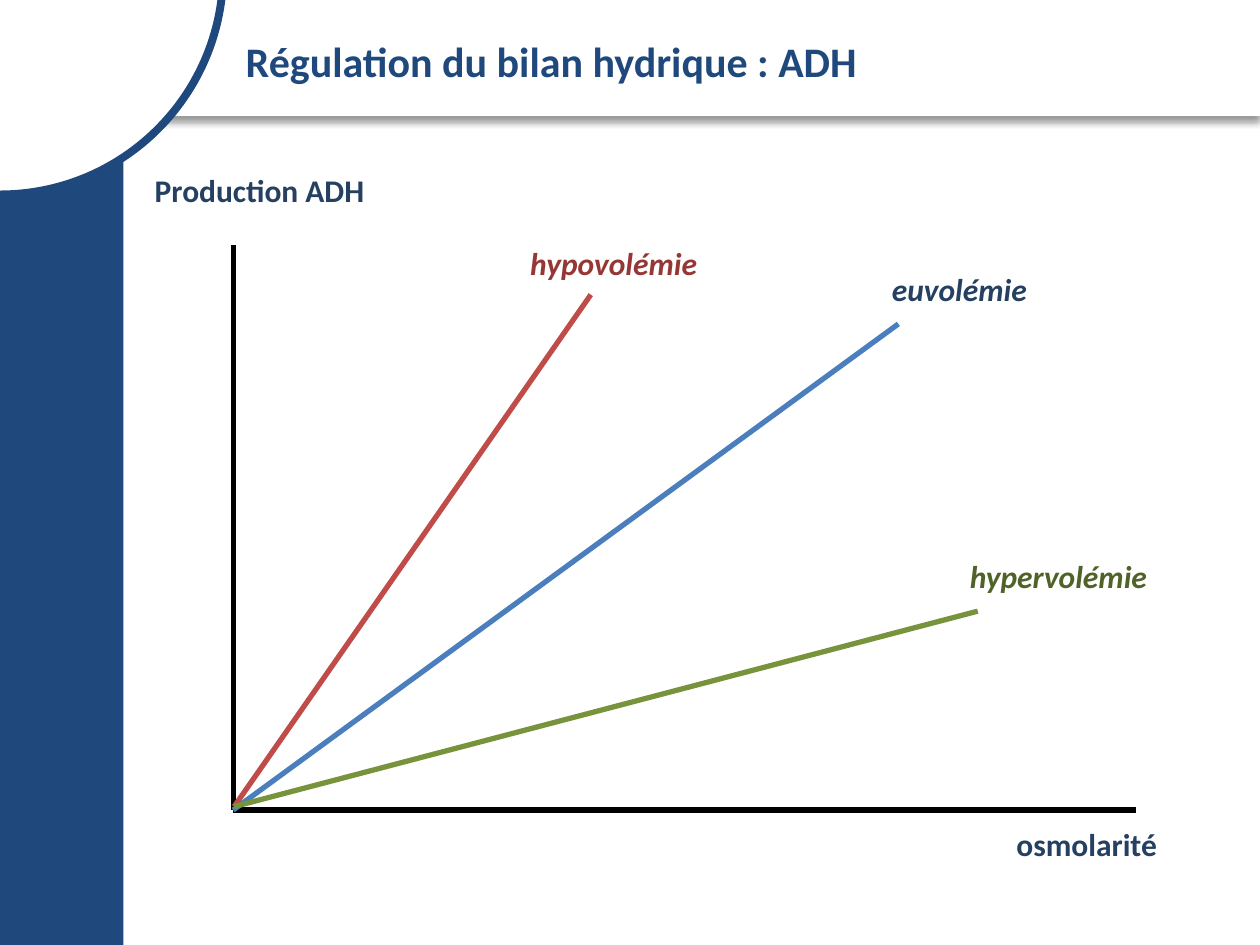
from lxml.etree import SubElement
from pptx import Presentation
from pptx.dml.color import RGBColor
from pptx.enum.shapes import MSO_CONNECTOR, MSO_SHAPE
from pptx.enum.text import MSO_ANCHOR, MSO_AUTO_SIZE, PP_ALIGN
from pptx.oxml.ns import qn
from pptx.util import Cm, Pt

COLORS = {
    "white": "FFFFFF", "black": "000000", "blue": "1F497D", "navy": "254061",
    "blue line": "4B7EBC", "red line": "BF4C48", "green line": "77933C",
    "red text": "953735", "green text": "4F6228",
}


def color(name):
    return RGBColor.from_string(COLORS[name])


def write_text(box, text, size=18, ink="navy", italic=False, anchor=MSO_ANCHOR.TOP):
    frame = box.text_frame
    frame.word_wrap = True
    frame.vertical_anchor = anchor
    para = frame.paragraphs[0]
    para.alignment = PP_ALIGN.LEFT
    span = para.add_run()
    span.text = text
    span.font.name = "Calibri"
    span.font.size = Pt(size)
    span.font.bold = True
    span.font.italic = italic
    span.font.color.rgb = color(ink)


deck = Presentation()
deck.slide_width, deck.slide_height = Cm(25.4), Cm(19.05)
page = deck.slides.add_slide(deck.slide_layouts[5])
shapes = page.shapes

# Header band, side band and corner disc
radius, center_y = 4.5, -0.58
decor = [
    (MSO_SHAPE.RECTANGLE, 0, 0, 25.4, 2.34, "white"),
    (MSO_SHAPE.RECTANGLE, 0, 0, 2.49, 19.05, "blue"),
    (MSO_SHAPE.OVAL, -radius, center_y - radius, 2 * radius, 2 * radius, "white"),
]
bands = []
for kind, left, top, width, height, fill in decor:
    band = shapes.add_shape(kind, Cm(left), Cm(top), Cm(width), Cm(height))
    band.shadow.inherit = False
    band.fill.solid()
    band.fill.fore_color.rgb = color(fill)
    band.line.fill.background()
    bands.append(band)
header, side, disc = bands
disc.line.color.rgb = color("blue")
disc.line.width = Pt(4.5)

effects = header._element.spPr.find(qn("a:effectLst"))
shadow = SubElement(effects, qn("a:outerShdw"), blurRad=str(Pt(4)), dist=str(Pt(3)),
                    dir="5400000", algn="t", rotWithShape="0")
shade = SubElement(shadow, qn("a:srgbClr"), val=COLORS["black"])
SubElement(shade, qn("a:alpha"), val="40000")

# Axes and response lines
origin_x, origin_y = 4.7, 16.33
lines = [
    (origin_x, 4.93, origin_x, origin_y, "black"),
    (22.91, origin_y, origin_x, origin_y, "black"),
    (origin_x, origin_y, 18.11, 6.53, "blue line"),
    (4.72, 16.26, 11.91, 5.94, "red line"),
    (4.72, 16.26, 19.71, 12.32, "green line"),
]
for start_x, start_y, end_x, end_y, ink in lines:
    line = shapes.add_connector(MSO_CONNECTOR.STRAIGHT, Cm(start_x), Cm(start_y),
                                Cm(end_x), Cm(end_y))
    line.line.color.rgb = color(ink)
    line.line.width = Pt(3)
    SubElement(line._element.spPr, qn("a:effectLst"))

# Axis and line labels
labels = [
    ("Production ADH", 2.87, 3.33, "navy", False),
    ("osmolarité", 20.24, 16.51, "navy", False),
    ("euvolémie", 17.73, 5.31, "navy", True),
    ("hypovolémie", 10.44, 4.8, "red text", True),
    ("hypervolémie", 19.3, 11.1, "green text", True),
]
for text, left, top, ink, italic in labels:
    box = shapes.add_textbox(Cm(left), Cm(top), Cm(5.16), Cm(1.02))
    write_text(box, text, ink=ink, italic=italic)
    box.text_frame.auto_size = MSO_AUTO_SIZE.SHAPE_TO_FIT_TEXT

# The title goes in front of the header band
title = shapes.title
title.left, title.top, title.width, title.height = Cm(4.7), Cm(0.33), Cm(20.19), Cm(1.8)
write_text(title, "Régulation du bilan hydrique : ADH", size=24, ink="blue",
           anchor=MSO_ANCHOR.MIDDLE)
title._element.getparent().append(title._element)

deck.save("out.pptx")
